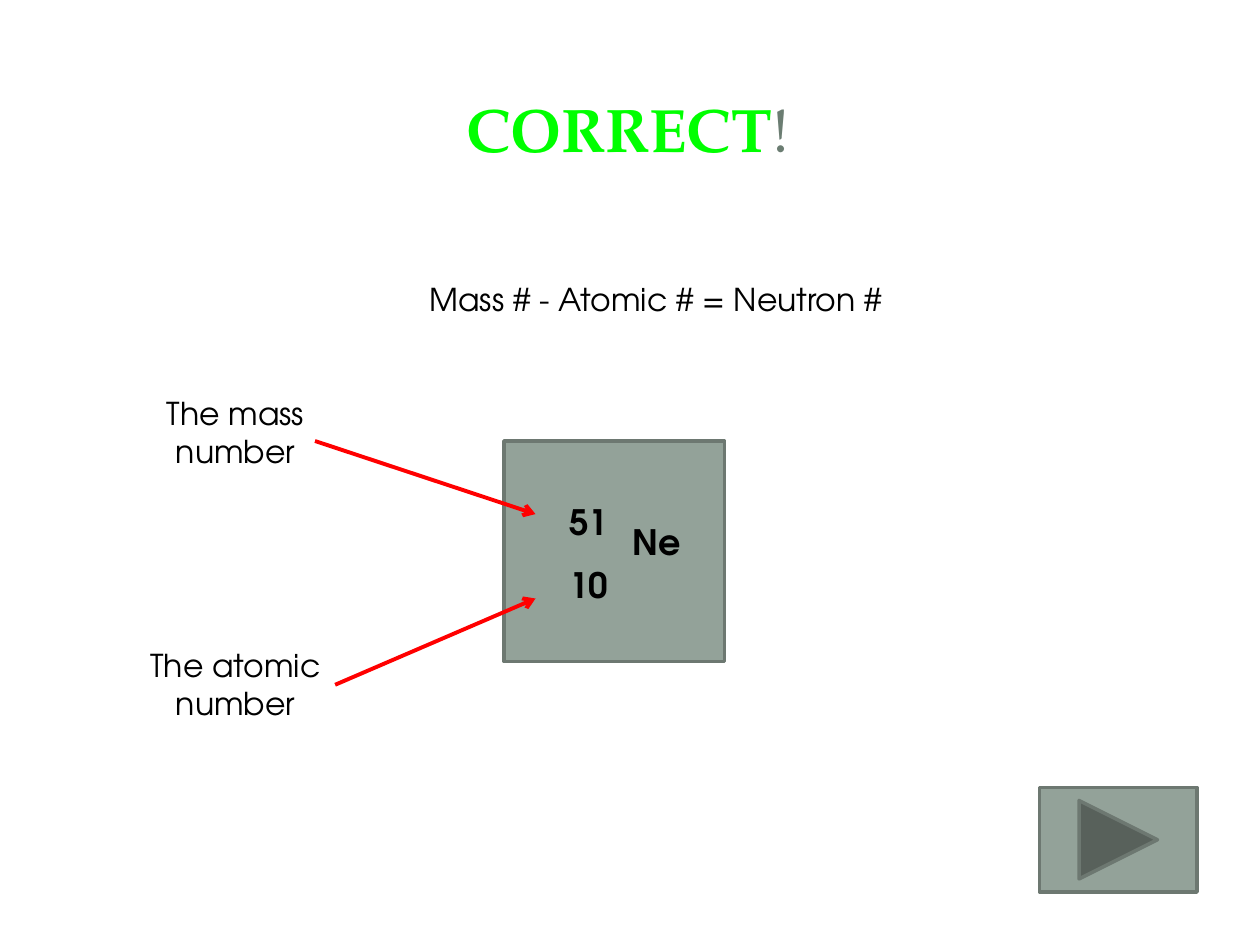
from pptx import Presentation
from pptx.dml.color import RGBColor
from pptx.enum.shapes import MSO_CONNECTOR as Connector, MSO_SHAPE as Shape
from pptx.enum.text import MSO_ANCHOR as Anchor, MSO_AUTO_SIZE as AutoSize, PP_ALIGN as Align
from pptx.oxml.ns import qn
from pptx.util import Inches, Pt
from lxml.etree import SubElement

THEME = {
    "heading_font": "TeX Gyre Pagella", "body_font": "TeX Gyre Adventor",
    "title_size": 35, "symbol_size": 20, "body_size": 18,
    "correct": "00FF00", "mark": "6B7D72", "text": "000000",
    "panel": "93A299", "border": "6D7871", "arrow": "FF0000",
    "border_width": 2, "arrow_width": 2.25,
}

TITLE = [("CORRECT", "correct", True), ("!", "mark", False)]
TITLE_BOX = (0.47, 0.45, 9.03, 1.14)
FORMULA = ("Mass # - Atomic # = Neutron #", (2.08, 2.17, 6.25, 0.4))
ELEMENT_BOX = (4, 3.5, 1.75, 1.75)
ELEMENT_TEXTS = [
    ("Ne", (4.92, 4.08, 0.67, 0.44)),
    ("51", (4.42, 3.92, 0.58, 0.44)),
    ("10", (4.42, 4.42, 0.58, 0.44)),
]
NEXT_BUTTON = (8.25, 6.25, 1.25, 0.83)
LABELS = [
    ("The atomic number", (1.08, 5.08, 1.58, 0.71), (2.67, 5.44), (4.25, 4.75), True),
    ("The mass number", (1.08, 3.08, 1.58, 0.71), (2.5, 3.5), (4.25, 4.08), False),
]


def inches(values):
    return [Inches(value) for value in values]


def color(name):
    return RGBColor.from_string(THEME[name])


def add_text(shapes, box, runs, size, font="body_font", align=Align.CENTER):
    shape = shapes.add_textbox(*inches(box))
    frame = shape.text_frame
    frame.word_wrap = True
    frame.auto_size = AutoSize.SHAPE_TO_FIT_TEXT
    paragraph = frame.paragraphs[0]
    paragraph.alignment = align
    for text, color_name, bold in runs:
        run = paragraph.add_run()
        run.text = text
        run.font.name = THEME[font]
        run.font.size = Pt(THEME[size])
        run.font.bold = bold
        run.font.color.rgb = color(color_name)
    return shape


def add_panel(shapes, kind, box):
    shape = shapes.add_shape(kind, *inches(box))
    shape.shadow.inherit = False
    shape.fill.solid()
    shape.fill.fore_color.rgb = color("panel")
    shape.line.color.rgb = color("border")
    shape.line.width = Pt(THEME["border_width"])


def add_arrow(shapes, start, end):
    arrow = shapes.add_connector(Connector.STRAIGHT, *inches(start + end))
    arrow.line.color.rgb = color("arrow")
    arrow.line.width = Pt(THEME["arrow_width"])
    SubElement(arrow.line._get_or_add_ln(), qn("a:tailEnd"), type="arrow")
    SubElement(arrow._element.spPr, qn("a:effectLst"))
    return arrow


def main():
    """Build the answer slide that explains how to count neutrons."""
    presentation = Presentation()
    presentation.slide_width, presentation.slide_height = Inches(10), Inches(7.5)
    slide = presentation.slides.add_slide(presentation.slide_layouts[6])
    shapes = slide.shapes

    element = shapes.add_group_shape().shapes
    add_panel(element, Shape.RECTANGLE, ELEMENT_BOX)
    for text, box in ELEMENT_TEXTS:
        add_text(element, box, [(text, "text", True)], "symbol_size", align=Align.LEFT)

    title = add_text(shapes, TITLE_BOX, TITLE, "title_size", "heading_font")
    title.text_frame.auto_size = AutoSize.NONE
    title.text_frame.vertical_anchor = Anchor.MIDDLE

    add_panel(shapes, Shape.ACTION_BUTTON_FORWARD_OR_NEXT, NEXT_BUTTON)
    formula, formula_box = FORMULA
    add_text(shapes, formula_box, [(formula, "text", False)], "body_size")

    for text, box, start, end, joined in LABELS:
        label = add_text(shapes, box, [(text, "text", False)], "body_size")
        arrow = add_arrow(shapes, start, end)
        if joined:
            arrow.begin_connect(label, 3)

    presentation.save("out.pptx")


if __name__ == "__main__":
    main()
